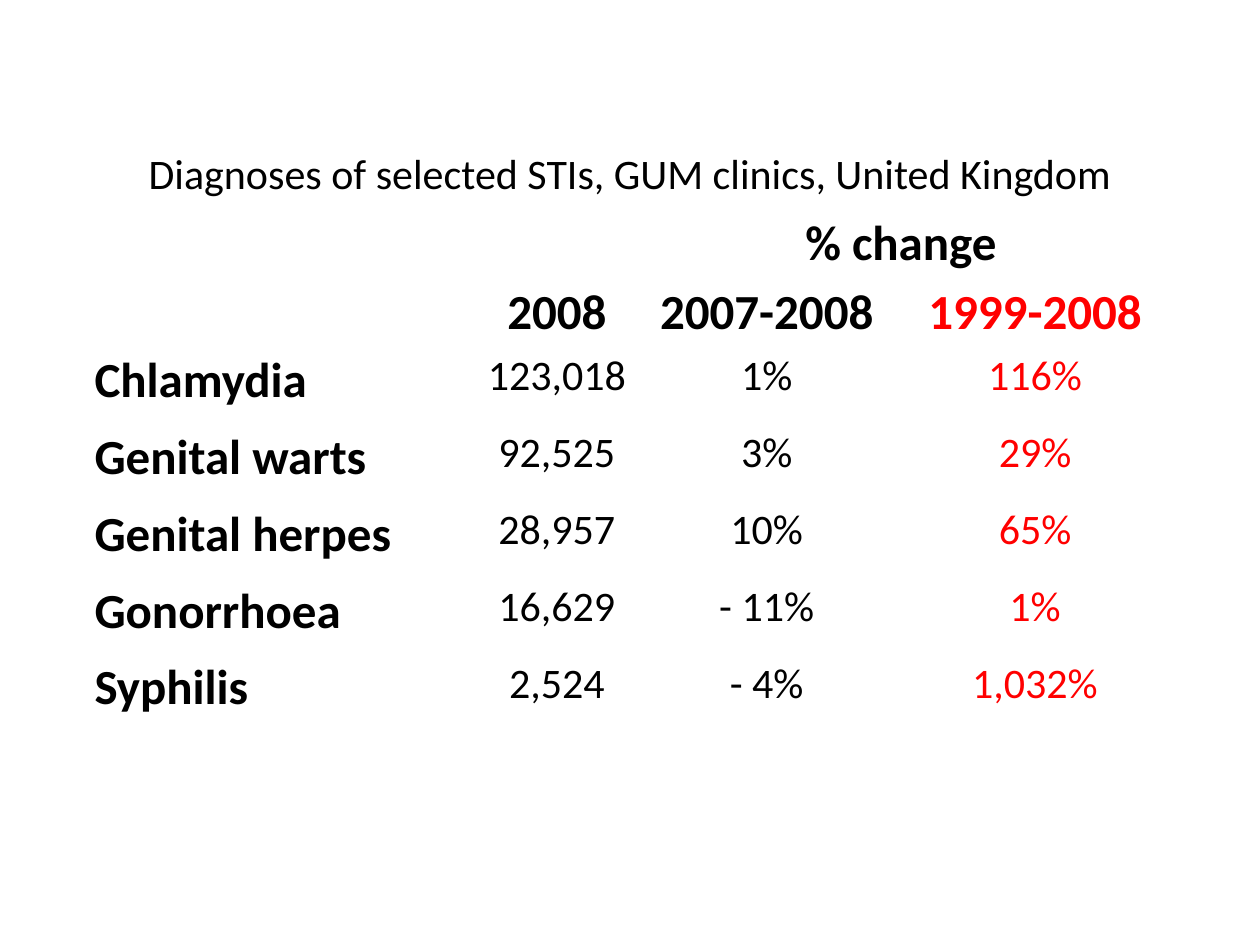
from pptx import Presentation
from pptx.dml.color import RGBColor
from pptx.enum import text as t
from pptx.util import Inches, Pt

TITLE = "Diagnoses of selected STIs, GUM clinics, United Kingdom"
GROUP = "% change"
HEADS = ["", "2008", "2007-2008", "1999-2008"]
ROWS = [
    ["Chlamydia", "123,018", "1%", "116%"],
    ["Genital warts", "92,525", "3%", "29%"],
    ["Genital herpes", "28,957", "10%", "65%"],
    ["Gonorrhoea", "16,629", "- 11%", "1%"],
    ["Syphilis", "2,524", "- 4%", "1,032%"],
]
COLORS = {"text": "000000", "trend": "FF0000"}
WIDTHS = [3.07, 1.2, 2.13, 2.13]
HEIGHTS = [0.41] + [0.61] * 6


def write(frame, words, size=24, bold=False, color="text", align="CENTER"):
    para = frame.paragraphs[0]
    para.alignment = getattr(t.PP_ALIGN, align)
    run = para.add_run()
    run.text = words
    font = run.font
    font.name, font.size, font.bold = "Calibri", Pt(size), bold
    font.color.rgb = RGBColor.from_string(COLORS[color])


deck = Presentation()
deck.slide_width, deck.slide_height = Inches(10), Inches(7.5)
slide = deck.slides.add_slide(deck.slide_layouts[5])

# Title
title = slide.shapes.title
title.left, title.top = Inches(0.67), Inches(0.68)
title.width, title.height = Inches(8.66), Inches(0.94)
frame = title.text_frame
frame.word_wrap = True
frame.vertical_anchor = t.MSO_ANCHOR.BOTTOM
frame.margin_left = frame.margin_right = Inches(0.08)
frame.margin_top = frame.margin_bottom = Inches(0.05)
write(frame, TITLE)

# Plain table without banding or fills
table = slide.shapes.add_table(
    len(HEIGHTS), len(WIDTHS), Inches(0.75), Inches(1.7),
    Inches(sum(WIDTHS)), Inches(sum(HEIGHTS))).table
table.first_row = table.horz_banding = False
for col, width in zip(table.columns, WIDTHS):
    col.width = Inches(width)
for row, height in zip(table.rows, HEIGHTS):
    row.height = Inches(height)
table.cell(0, 2).merge(table.cell(0, 3))

# Cells: bold headings and names, last column in red
grid = [["", "", GROUP, ""], HEADS] + ROWS
for r, line in enumerate(grid):
    for c, words in enumerate(line):
        cell = table.cell(r, c)
        cell.fill.background()
        if not words:
            continue
        cell.margin_left = cell.margin_right = 0
        cell.margin_top = cell.margin_bottom = 0
        if r == 1:
            cell.vertical_anchor = t.MSO_ANCHOR.MIDDLE
        strong = r < 2 or c == 0
        write(cell.text_frame, words, size=28 if strong else 24, bold=strong,
              color="trend" if c == 3 else "text",
              align="CENTER" if c else "LEFT")

deck.save("out.pptx")
